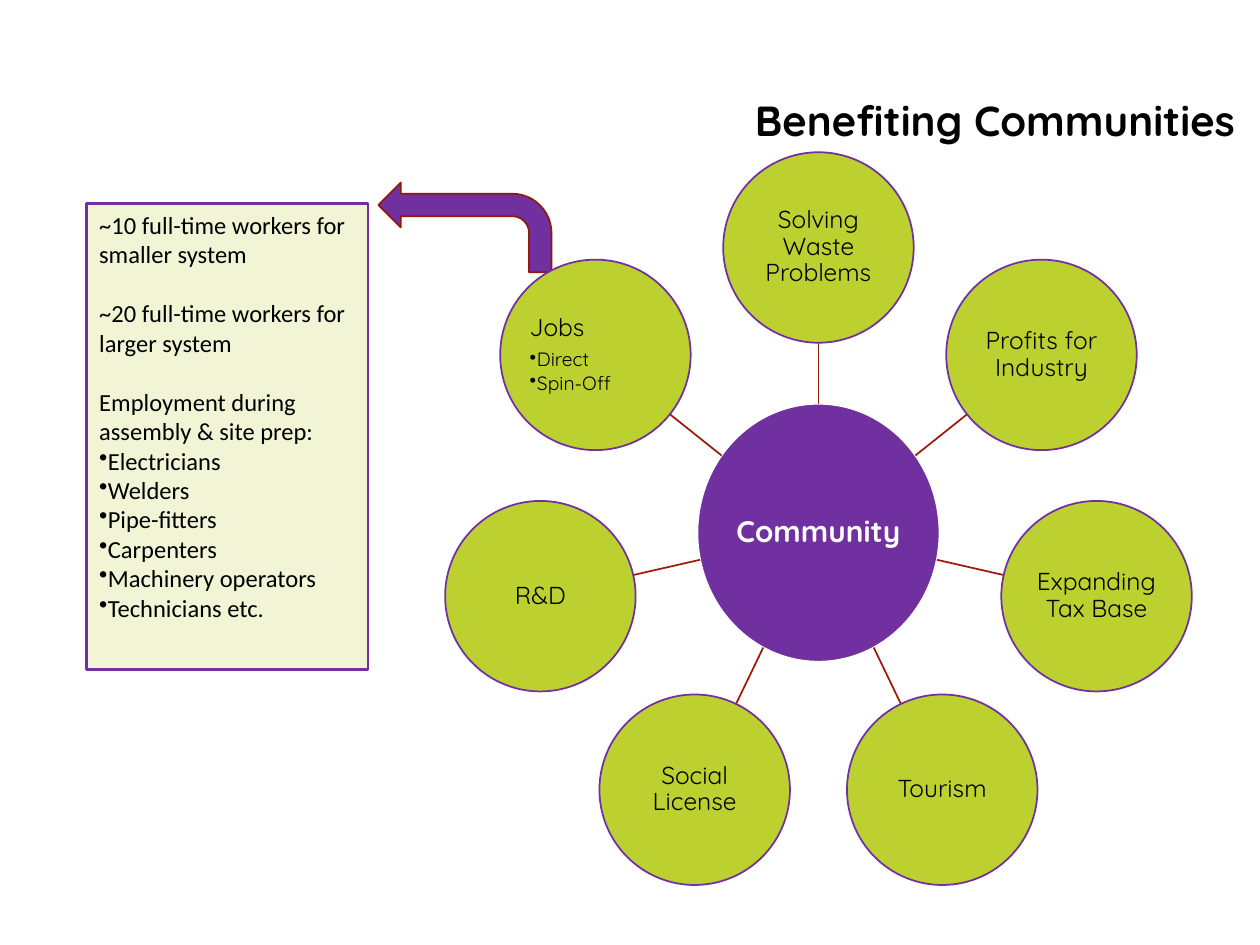
"""Build the slide on how a community benefits."""
from dataclasses import dataclass
from math import cos, hypot, pi, sin

from lxml.etree import SubElement
from pptx import Presentation
from pptx.dml.color import RGBColor
from pptx.enum.shapes import MSO_CONNECTOR, MSO_SHAPE as Preset
from pptx.enum.text import MSO_ANCHOR as Anchor, PP_ALIGN as Align
from pptx.oxml.ns import qn
from pptx.util import Cm, Pt

COLOURS = {
    "purple": "7030A0",
    "lime": "BCD030",
    "white": "FFFFFF",
    "black": "000000",
    "arrow edge": "91190A",
    "link": "9D1B0A",
}
CENTRE_X, CENTRE_Y = 16.5, 10.74
HUB_WIDTH, HUB_HEIGHT = 4.88, 5.2
RING_RADIUS, CIRCLE_SIZE = 5.75, 3.84


@dataclass(frozen=True)
class Line:
    """One paragraph of text."""
    text: str
    size: int = 14
    bold: bool = False
    colour: str = "black"
    bullet: bool = False
    level: int = 0
    indent: float = 0
    before: float = 0
    after: float = 0
    spacing: float = 1.0


@dataclass(frozen=True)
class Benefit:
    """One outer circle of the diagram."""
    lines: tuple[Line, ...]
    align: Align = Align.CENTER


def topic(text: str, **options) -> Line:
    """Return a heading line for a circle."""
    return Line(text, after=5, spacing=0.9, **options)


def detail(text: str) -> Line:
    """Return a small bulleted line for a circle."""
    return Line(text, 11, bullet=True, level=1, indent=0.15, after=1.7, spacing=0.9)


BENEFITS = (
    Benefit((topic("Solving Waste Problems"),)),
    Benefit((topic("Profits for Industry"),)),
    Benefit((topic("Expanding Tax Base"),)),
    Benefit((topic("Tourism"),)),
    Benefit((topic("Social License"),)),
    Benefit((topic("R&D"),)),
    Benefit((topic("Jobs"), detail("Direct"), detail("Spin-Off")), Align.LEFT),
)
TRADES = ("Electricians", "Welders", "Pipe-fitters", "Carpenters",
          "Machinery operators", "Technicians etc.")
JOB_LINES = (
    Line("~10 full-time workers for smaller system"),
    Line("~20 full-time workers for larger system", before=17),
    Line("Employment during assembly & site prep:", before=17),
    *(Line(trade, bullet=True) for trade in TRADES),
)


def rgb(name: str) -> RGBColor:
    """Return a named colour."""
    return RGBColor.from_string(COLOURS[name])


def write(shape, lines: tuple[Line, ...], font: str, align: Align = Align.LEFT,
          anchor: Anchor = Anchor.TOP, inset: float | None = None) -> None:
    """Fill a shape with formatted paragraphs."""
    frame = shape.text_frame
    frame.text = "\n".join(line.text for line in lines)
    frame.word_wrap = True
    frame.vertical_anchor = anchor
    if inset is not None:
        frame.margin_left = frame.margin_right = Cm(inset)
        frame.margin_top = frame.margin_bottom = Cm(inset)
    for paragraph, line in zip(frame.paragraphs, lines):
        if line.bullet:
            properties = paragraph._p.get_or_add_pPr()
            properties.set("marL", str(Cm(line.indent)))
            properties.set("indent", str(-Cm(line.indent)))
            SubElement(properties, qn("a:buChar")).set("char", "•")
        paragraph.alignment = align
        paragraph.level = line.level
        paragraph.line_spacing = line.spacing
        paragraph.space_before = Pt(line.before)
        paragraph.space_after = Pt(line.after)
        for run in paragraph.runs:
            run.font.name = font
            run.font.size = Pt(line.size)
            run.font.bold = line.bold
            run.font.color.rgb = rgb(line.colour)


def add_figure(slide, preset: Preset, left: float, top: float, width: float,
               height: float, fill: str, edge: str, weight: float = 1):
    """Add a filled and outlined preset shape."""
    shape = slide.shapes.add_shape(preset, Cm(left), Cm(top), Cm(width), Cm(height))
    shape.shadow.inherit = False
    shape.fill.solid()
    shape.fill.fore_color.rgb = rgb(fill)
    shape.line.color.rgb = rgb(edge)
    shape.line.width = Pt(weight)
    return shape


def add_circle(slide, x: float, y: float, width: float, height: float, fill: str,
               edge: str, benefit: Benefit) -> None:
    """Add a labelled ellipse around a centre point."""
    shape = add_figure(slide, Preset.OVAL, x - width / 2, y - height / 2,
                       width, height, fill, edge)
    write(shape, benefit.lines, "Quicksand", benefit.align, Anchor.MIDDLE, 0.03)


def ring_point(angle: float, radius: float) -> tuple[float, float]:
    """Return the point at an angle and distance from the hub centre."""
    return CENTRE_X + radius * cos(angle), CENTRE_Y + radius * sin(angle)


def add_link(slide, angle: float) -> None:
    """Join the hub edge to the outer circle at an angle."""
    hub_radius = 1 / hypot(2 * cos(angle) / HUB_WIDTH, 2 * sin(angle) / HUB_HEIGHT)
    start = ring_point(angle, hub_radius)
    end = ring_point(angle, RING_RADIUS - CIRCLE_SIZE / 2)
    link = slide.shapes.add_connector(
        MSO_CONNECTOR.STRAIGHT, *(Cm(value) for value in start + end))
    link.line.color.rgb = rgb("link")
    link.line.width = Pt(1)
    SubElement(link._element.spPr, qn("a:effectLst"))


def add_diagram(slide) -> None:
    """Add the hub, its links and the ring of benefits."""
    hub = Benefit((topic("Community", size=17, bold=True, colour="white"),))
    add_circle(slide, CENTRE_X, CENTRE_Y, HUB_WIDTH, HUB_HEIGHT, "purple", "white", hub)
    for index, benefit in enumerate(BENEFITS):
        angle = 2 * pi * index / len(BENEFITS) - pi / 2
        add_link(slide, angle)
        add_circle(slide, *ring_point(angle, RING_RADIUS), CIRCLE_SIZE, CIRCLE_SIZE,
                   "lime", "purple", benefit)


def add_jobs_panel(slide) -> None:
    """Add the translucent panel with job details."""
    panel = add_figure(slide, Preset.RECTANGLE, 1.75, 4.1, 5.67, 9.4,
                       "lime", "purple", 1.5)
    colour = panel._element.spPr.find(qn("a:solidFill")).find(qn("a:srgbClr"))
    SubElement(colour, qn("a:alpha")).set("val", "20000")
    write(panel, JOB_LINES, "Calibri")


def main() -> None:
    """Create and save the presentation."""
    presentation = Presentation()
    presentation.slide_width, presentation.slide_height = Cm(25.4), Cm(19.05)
    slide = presentation.slides.add_slide(presentation.slide_layouts[6])
    arrow = add_figure(slide, Preset.BENT_ARROW, 7.63, 3.68, 3.49, 1.81,
                       "purple", "arrow edge")
    arrow._element.spPr.xfrm.set("flipH", "1")
    add_diagram(slide)
    title = slide.shapes.add_textbox(Cm(14.97), Cm(1.78), Cm(10.43), Cm(1.28))
    write(title, (Line("Benefiting Communities", 24, bold=True),), "Quicksand")
    add_jobs_panel(slide)
    presentation.save("out.pptx")


if __name__ == "__main__":
    main()
